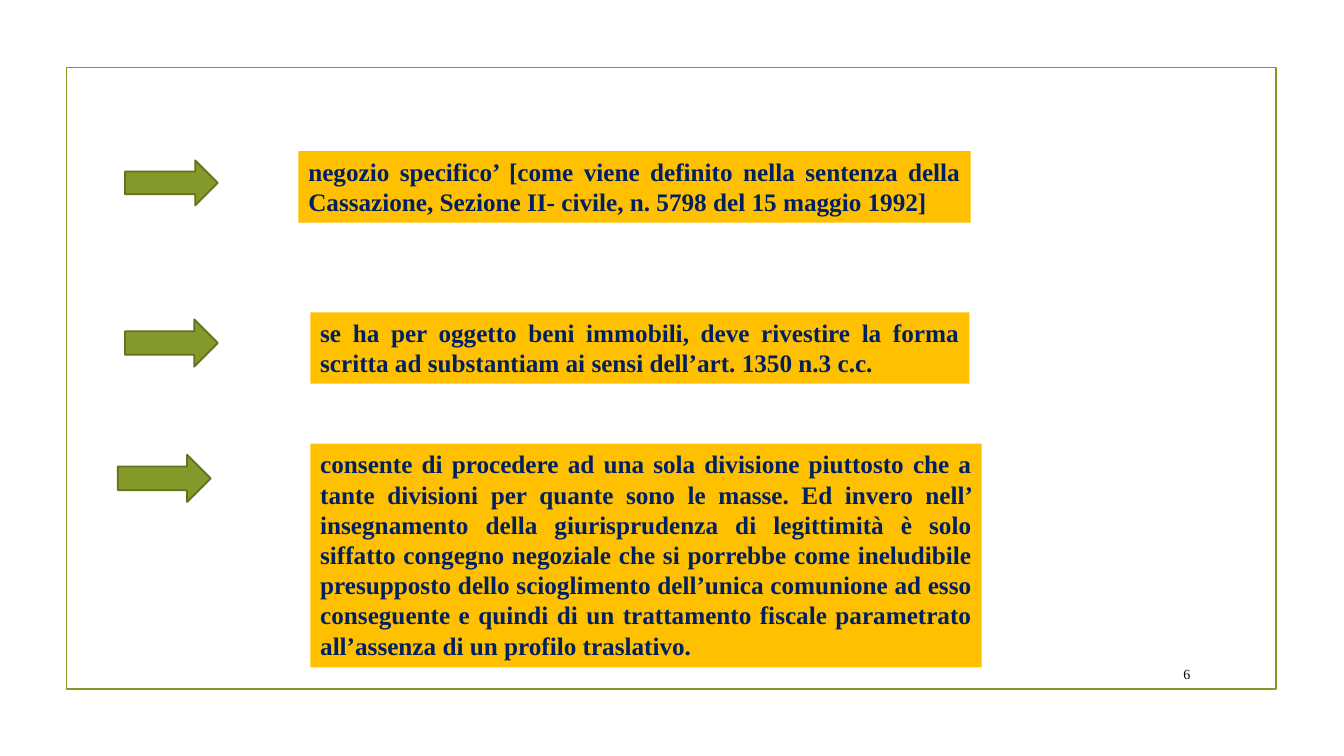
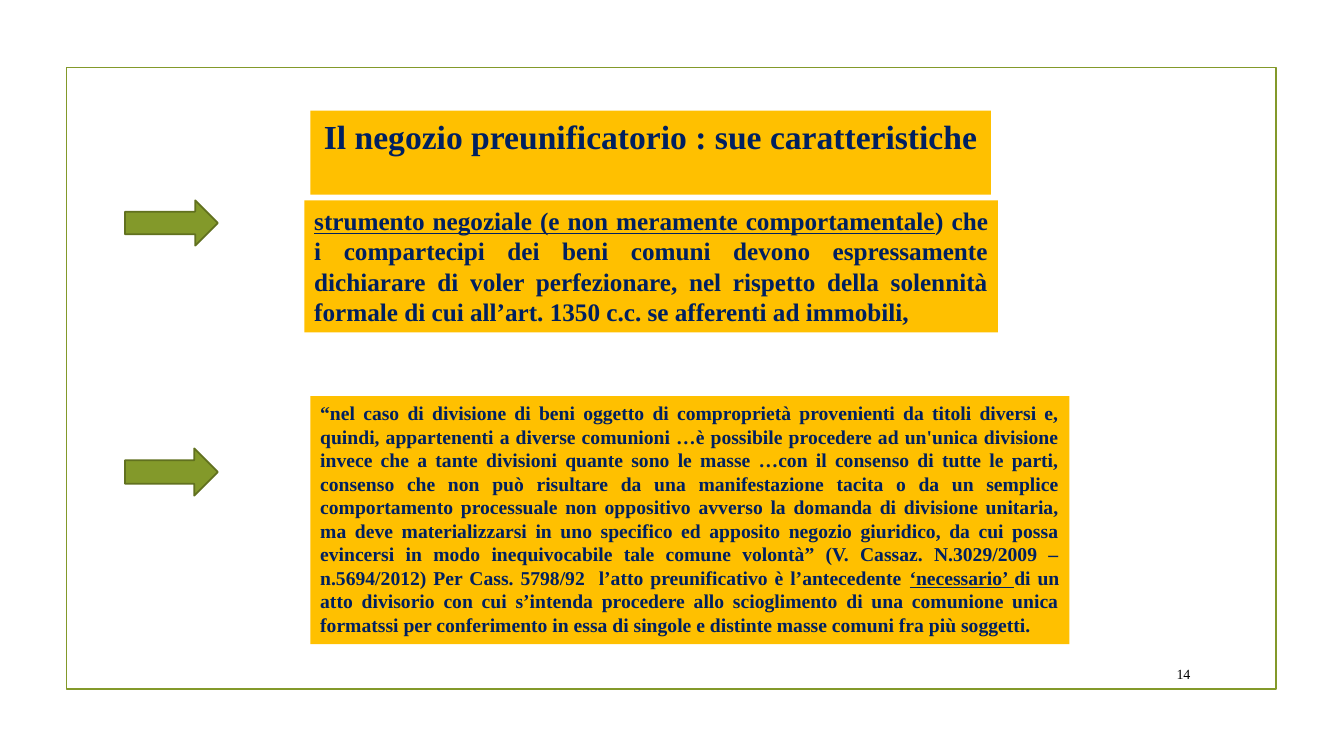
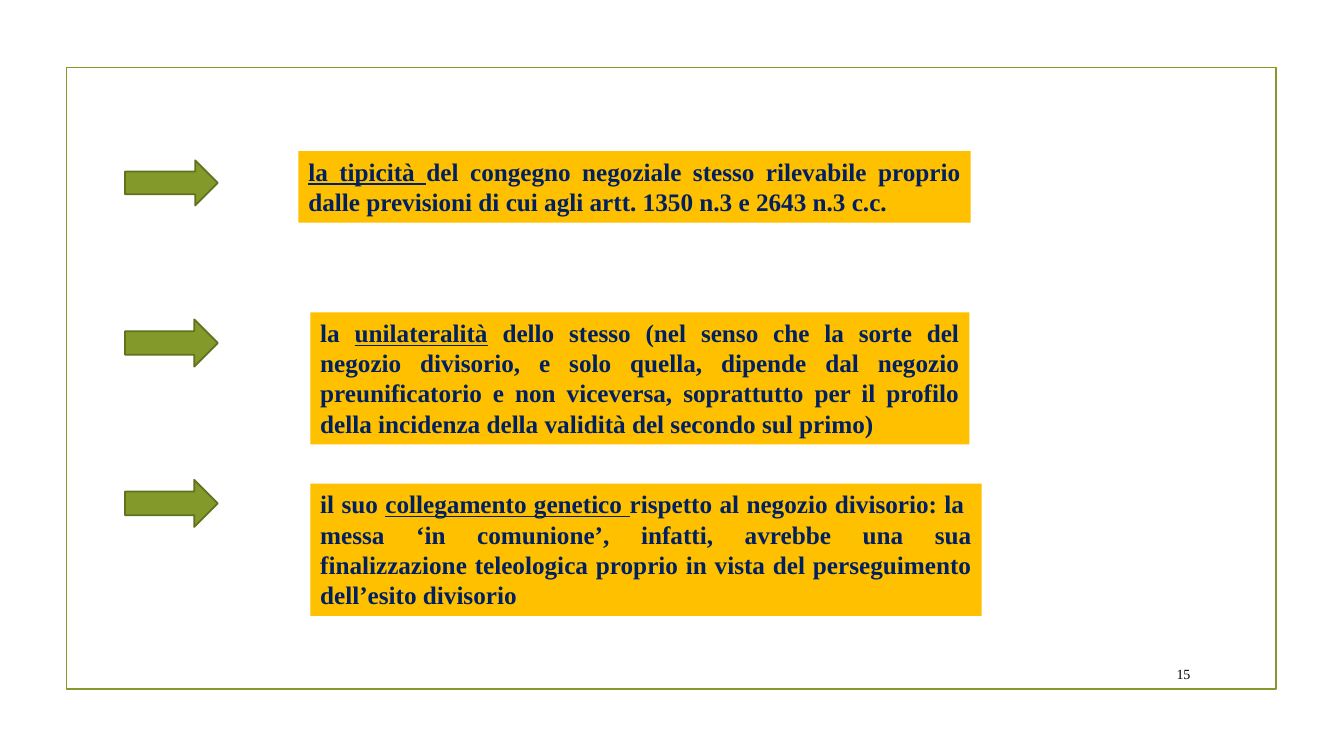
from dataclasses import dataclass

from pptx import Presentation
from pptx.dml.color import RGBColor
from pptx.enum.shapes import MSO_SHAPE
from pptx.enum.text import MSO_ANCHOR, MSO_AUTO_SIZE, PP_ALIGN
from pptx.shapes.autoshape import Shape
from pptx.slide import Slide
from pptx.util import Cm, Pt

RECT, ARROW = MSO_SHAPE.RECTANGLE, MSO_SHAPE.RIGHT_ARROW
TOP, MIDDLE = MSO_ANCHOR.TOP, MSO_ANCHOR.MIDDLE
GROW = MSO_AUTO_SIZE.SHAPE_TO_FIT_TEXT
CENTER, RIGHT, JUSTIFY = PP_ALIGN.CENTER, PP_ALIGN.RIGHT, PP_ALIGN.JUSTIFY
TITLE_ONLY, BLANK = 5, 6

# Shared look
GREEN, OLIVE, GOLD = "83992A", "61711F", "FFC000"
NAVY, BLACK, WHITE = "002060", "000000", "FFFFFF"
FONT = "Times New Roman"
LINE = 1.25


@dataclass(frozen=True)
class Area:
    left: float
    top: float
    width: float
    height: float


@dataclass(frozen=True)
class Point:
    """A gold box with its arrow; underlined words stand between _ marks."""
    area: Area
    arrow: Area
    text: str
    size: int = 18


@dataclass(frozen=True)
class Page:
    number: int
    points: tuple[Point, ...]
    title: str = ""


FRAME = Area(1.68, 1.7, 30.48, 15.67)
TITLE = Area(7.82, 2.79, 17.15, 1.27)
NUMBER = Area(28.75, 16.59, 1.5, 0.79)


def arrow(top: float, height: float = 1.19, left: float = 3.15) -> Area:
    return Area(left, top, 2.34, height)


# Places used on more than one slide
FIRST = Area(7.52, 3.81, 16.94, 1.8)
HIGH, MID = arrow(4.04, 1.14), arrow(8.05)

# The two parts of the long quotation
RULING = (
    "“nel caso di divisione di beni oggetto di comproprietà "
    "provenienti da titoli diversi e, quindi, appartenenti a "
    "diverse comunioni …è possibile procedere ad un'unica divisione "
    "invece che a tante divisioni quante sono le masse …con il "
    "consenso di tutte le parti, consenso che non può risultare da "
    "una manifestazione tacita o da un semplice comportamento "
    "processuale non oppositivo avverso la domanda di divisione "
    "unitaria, ma deve materializzarsi in uno specifico ed apposito "
    "negozio giuridico, da cui possa evincersi in modo "
    "inequivocabile tale comune volontà” ")
COMMENT = (
    "(V. Cassaz. N.3029/2009 – n.5694/2012) Per Cass. 5798/92  l’atto "
    "preunificativo è l’antecedente _‘necessario’ _di un atto divisorio "
    "con cui s’intenda procedere allo scioglimento di una comunione "
    "unica formatssi per conferimento in essa di singole e distinte "
    "masse comuni fra più soggetti.")

PAGES = (
    Page(6, (
        Point(FIRST, HIGH,
              "negozio specifico’ [come viene definito nella sentenza della "
              "Cassazione, Sezione II- civile, n. 5798 del 15 maggio 1992]"),
        Point(Area(7.82, 7.87, 16.61, 1.8), MID,
              "se ha per oggetto beni immobili, deve rivestire la forma "
              "scritta ad substantiam ai sensi dell’art. 1350 n.3 c.c."),
        Point(Area(7.82, 11.18, 16.92, 5.64), arrow(11.46, left=2.97),
              "consente di procedere ad una sola divisione piuttosto che a "
              "tante divisioni per quante sono le masse. Ed invero nell’ "
              "insegnamento della giurisprudenza di legittimità è solo "
              "siffatto congegno negoziale che si porrebbe come ineludibile "
              "presupposto dello scioglimento dell’unica comunione ad esso "
              "conseguente e quindi di un trattamento fiscale parametrato "
              "all’assenza di un profilo traslativo."),
    )),
    Page(14, (
        Point(Area(7.67, 5.05, 17.48, 3.33), arrow(5.05, 1.14),
              "_strumento negoziale (e non meramente comportamentale_) che "
              "i compartecipi dei beni comuni devono espressamente "
              "dichiarare di voler perfezionare, nel rispetto della solennità "
              "formale di cui all’art. 1350 c.c. se afferenti ad immobili,"),
        Point(Area(7.82, 9.98, 19.13, 6.25), arrow(11.3),
              RULING + COMMENT, 14),
    ), "Il negozio preunificatorio : sue caratteristiche"),
    Page(15, (
        Point(FIRST, HIGH,
              "_la tipicità _del congegno negoziale stesso rilevabile proprio "
              "dalle previsioni di cui agli artt. 1350 n.3 e 2643 n.3 c.c."),
        Point(Area(7.82, 7.87, 16.61, 3.33), MID,
              "la _unilateralità_ dello stesso (nel senso che la sorte del "
              "negozio divisorio, e solo quella, dipende dal negozio "
              "preunificatorio e non viceversa, soprattutto per il profilo "
              "della incidenza della validità del secondo sul primo)"),
        Point(Area(7.82, 12.19, 16.92, 3.33), arrow(12.09),
              "il suo _collegamento genetico _rispetto al negozio divisorio: "
              "la  messa ‘in comunione’, infatti, avrebbe una sua "
              "finalizzazione teleologica proprio in vista del perseguimento "
              "dell’esito divisorio"),
    )),
)


def color(code: str) -> RGBColor:
    return RGBColor.from_string(code)


def lengths(area: Area) -> tuple[Cm, Cm, Cm, Cm]:
    return Cm(area.left), Cm(area.top), Cm(area.width), Cm(area.height)


def paint(shape: Shape, code: str) -> None:
    shape.fill.solid()
    shape.fill.fore_color.rgb = color(code)


def draw(slide: Slide, kind: MSO_SHAPE, area: Area, line: str,
         fill: str = "") -> None:
    shape = slide.shapes.add_shape(kind, *lengths(area))
    shape.shadow.inherit = False
    shape.line.color.rgb = color(line)
    shape.line.width = Pt(LINE)
    if fill:
        paint(shape, fill)
    else:
        shape.fill.background()


def write(shape: Shape, text: str, size: int, align: PP_ALIGN,
          code: str = NAVY, bold: bool = True,
          anchor: MSO_ANCHOR = TOP) -> None:
    frame = shape.text_frame
    frame.word_wrap = True
    frame.vertical_anchor = anchor
    para = frame.paragraphs[0]
    para.alignment = align
    for part, words in enumerate(text.split("_")):
        if not words:
            continue
        run = para.add_run()
        run.text = words
        style = {"name": FONT, "size": Pt(size), "bold": bold,
                 "underline": part % 2 == 1}
        for key, value in style.items():
            setattr(run.font, key, value)
        run.font.color.rgb = color(code)


def head(slide: Slide, text: str) -> None:
    title = slide.shapes.title
    title.left, title.top, title.width, title.height = lengths(TITLE)
    paint(title, GOLD)
    write(title, text, 24, CENTER)
    title.text_frame.auto_size = GROW


def label(slide: Slide, point: Point) -> None:
    box = slide.shapes.add_textbox(*lengths(point.area))
    paint(box, GOLD)
    write(box, point.text, point.size, JUSTIFY)
    box.text_frame.auto_size = GROW
    draw(slide, ARROW, point.arrow, OLIVE, GREEN)


def build(deck: Presentation, page: Page) -> None:
    layout = deck.slide_layouts[TITLE_ONLY if page.title else BLANK]
    slide = deck.slides.add_slide(layout)
    draw(slide, RECT, FRAME, GREEN)
    if page.title:
        head(slide, page.title)
    for point in page.points:
        label(slide, point)
    # Page number
    box = slide.shapes.add_textbox(*lengths(NUMBER))
    write(box, str(page.number), 10, RIGHT, BLACK, False, MIDDLE)


def main() -> None:
    deck = Presentation()
    deck.slide_width, deck.slide_height = Cm(33.87), Cm(19.05)
    back = deck.slide_master.background.fill
    back.solid()
    back.fore_color.rgb = color(WHITE)
    for page in PAGES:
        build(deck, page)
    deck.save("out.pptx")


if __name__ == "__main__":
    main()
